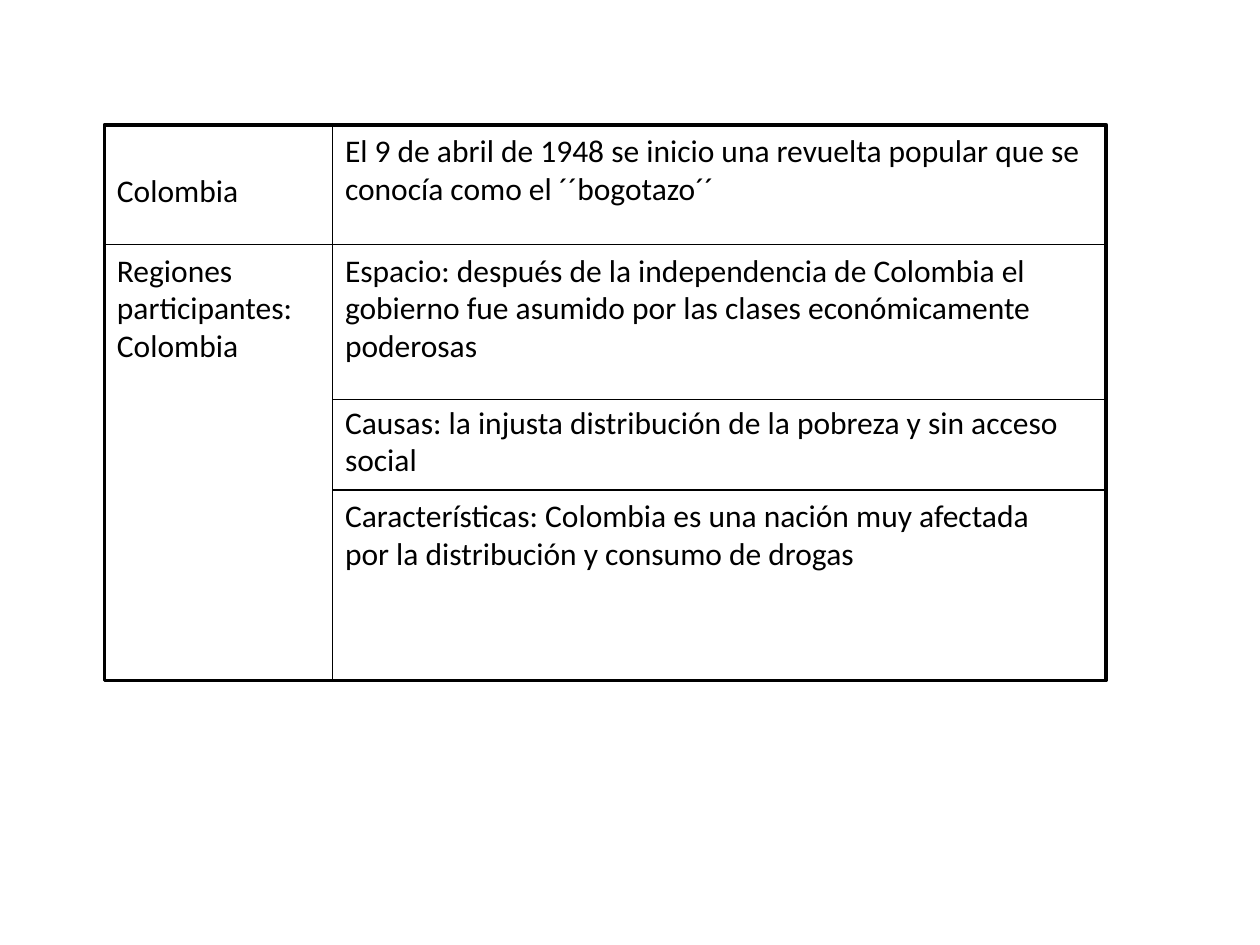
from lxml import etree
from pptx import Presentation
from pptx import util as u
from pptx.dml.color import RGBColor
from pptx.enum import shapes, text
from pptx.oxml import ns

COLORS = {"ink": "000000", "paper": "FFFFFF"}
LEFT, DIVIDER, RIGHT = 0.83, 2.64, 8.78
TOP, REGIONS, CAUSES, FEATURES, BOTTOM = 0.99, 1.94, 3.17, 3.89, 5.4
BLANK_LINE = 22


class Sheet:
    """Hold the style and the current page, and draw each kind of element."""

    def __init__(self, page, font="Calibri", size=18):
        self.page = page
        self.font = font
        self.size = size

    def color(self, name):
        return RGBColor.from_string(COLORS[name])

    def frame(self, left, top, right, bottom):
        box = self.page.shapes.add_shape(
            shapes.MSO_SHAPE.RECTANGLE, u.Inches(left), u.Inches(top),
            u.Inches(right - left), u.Inches(bottom - top))
        box.shadow.inherit = False
        box.fill.solid()
        box.fill.fore_color.rgb = self.color("paper")
        box.line.color.rgb = self.color("ink")
        box.line.width = u.Pt(2)

    def rule(self, x1, y1, x2, y2):
        line = self.page.shapes.add_connector(
            shapes.MSO_CONNECTOR.STRAIGHT, *map(u.Inches, (x1, y1, x2, y2)))
        line.line.color.rgb = self.color("ink")
        line.line.width = u.Pt(0.75)
        etree.SubElement(line._element.spPr, ns.qn("a:effectLst"))

    def label(self, left, top, width, height, lines, gap=0):
        box = self.page.shapes.add_textbox(
            *map(u.Inches, (left, top, width, height)))
        frame = box.text_frame
        frame.word_wrap = True
        frame.auto_size = text.MSO_AUTO_SIZE.SHAPE_TO_FIT_TEXT
        for index, line in enumerate(lines):
            para = frame.add_paragraph() if index else frame.paragraphs[0]
            if index and gap:
                para.space_before = u.Pt(gap)
            span = para.add_run()
            span.text = line
            span.font.name = self.font
            span.font.size = u.Pt(self.size)
            span.font.color.rgb = self.color("ink")


def main():
    deck = Presentation()
    deck.slide_width, deck.slide_height = u.Inches(10), u.Inches(7.5)
    sheet = Sheet(deck.slides.add_slide(deck.slide_layouts[6]))
    narrow, wide = DIVIDER - LEFT, RIGHT - DIVIDER

    sheet.frame(LEFT, TOP, RIGHT, BOTTOM)
    sheet.rule(DIVIDER, TOP, DIVIDER, BOTTOM)
    for start, y in ((LEFT, REGIONS), (DIVIDER, CAUSES), (DIVIDER, FEATURES)):
        sheet.rule(start, y, RIGHT, y)

    sheet.label(LEFT, 1.31, narrow, 0.4, ["Colombia"])
    sheet.label(DIVIDER, TOP, wide, 0.71, [
        "El 9 de abril de 1948 se inicio una revuelta popular que se "
        "conocía como el ´´bogotazo´´"])
    sheet.label(DIVIDER, REGIONS, wide, 1.92, [
        "Espacio: después de la independencia de Colombia el gobierno fue "
        "asumido por las clases económicamente poderosas",
        "Causas: la injusta distribución de la pobreza y sin acceso social",
    ], gap=BLANK_LINE)
    sheet.label(DIVIDER, FEATURES, 5.98, 0.71, [
        "Características: Colombia es una nación muy afectada por la "
        "distribución y consumo de drogas"])
    sheet.label(LEFT, REGIONS, narrow, 1.01,
                ["Regiones participantes:", "Colombia"])
    deck.save("out.pptx")


if __name__ == "__main__":
    main()
